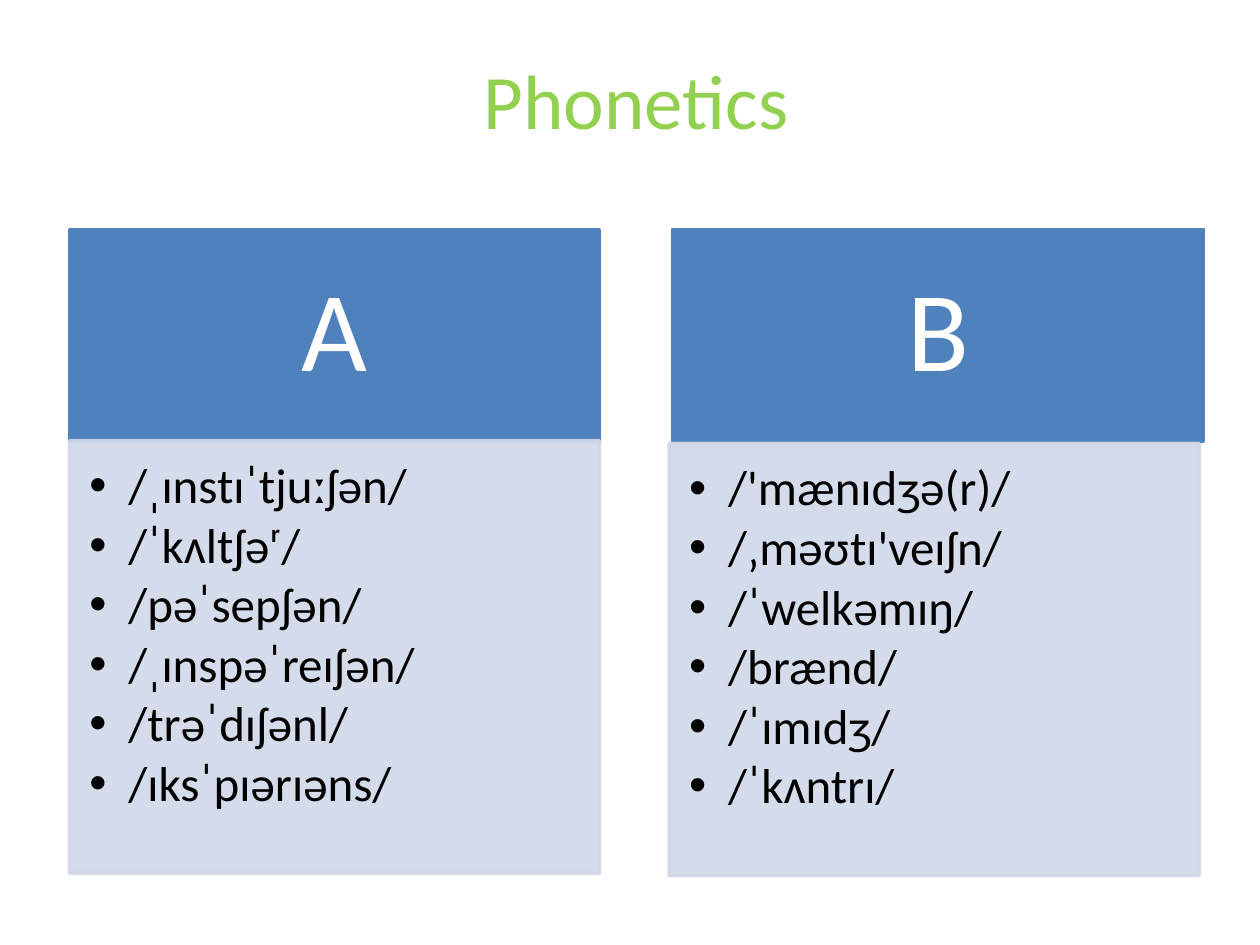
import lxml.etree
import pptx
import pptx.dml.color
import pptx.enum.shapes
import pptx.enum.text
import pptx.oxml.ns
import pptx.util

Inches = pptx.util.Inches
Pt = pptx.util.Pt
ALIGN = pptx.enum.text.PP_ALIGN
ANCHOR = pptx.enum.text.MSO_ANCHOR

COLORS = {
    "title": "92D050",
    "header": "4F81BD",
    "body": "D0D8E8",
    "light": "FFFFFF",
    "dark": "000000",
}
FONT = "Calibri"
BOX_W, HEADER_H, BODY_H = 4.21, 1.68, 3.43
HEADER_TOP = 1.82

# heading, header left, body left, body top, transcriptions
COLUMNS = [
    ("A", 0.55, 0.55, 3.5, [
        "/ˌɪnstɪˈtjuːʃən/", "/ˈkʌltʃəʳ/", "/pəˈsepʃən/",
        "/ˌɪnspəˈreɪʃən/", "/trəˈdɪʃənl/", "/ɪksˈpɪərɪəns/"]),
    ("B", 5.34, 5.31, 3.52, [
        "/'mænɪdʒə(r)/", "/‚məʊtɪ'veɪʃn/", "/ˈwelkəmɪŋ/",
        "/brænd/", "/ˈɪmɪdʒ/", "/ˈkʌntrɪ/"]),
]


def rgb(name):
    return pptx.dml.color.RGBColor.from_string(COLORS[name])


def set_alpha(fill_format, percent):
    """Make a solid fill partly opaque."""
    clr = fill_format.fore_color._xFill.find(pptx.oxml.ns.qn("a:srgbClr"))
    alpha = lxml.etree.SubElement(clr, pptx.oxml.ns.qn("a:alpha"))
    alpha.set("val", str(percent * 1000))


def add_bullet(p, indent):
    pPr = p._p.get_or_add_pPr()
    pPr.set("marL", str(Inches(indent)))
    pPr.set("indent", str(-Inches(indent)))
    font = lxml.etree.SubElement(pPr, pptx.oxml.ns.qn("a:buFont"))
    font.set("typeface", "Arial")
    bullet = lxml.etree.SubElement(pPr, pptx.oxml.ns.qn("a:buChar"))
    bullet.set("char", "•")


def write_text(tf, lines, size, color, align=ALIGN.CENTER, anchor=ANCHOR.MIDDLE,
               insets=(0.1, 0.05, 0.1, 0.05), spacing=1.0, after=0, indent=None):
    """Fill a text frame, one paragraph a line; an indent adds bullets."""
    tf.word_wrap = True
    tf.vertical_anchor = anchor
    tf.margin_left, tf.margin_top, tf.margin_right, tf.margin_bottom = map(Inches, insets)
    for i, line in enumerate(lines):
        p = tf.add_paragraph() if i else tf.paragraphs[0]
        p.alignment = align
        p.line_spacing = spacing
        p.space_after = Pt(after)
        if indent:
            add_bullet(p, indent)
        r = p.add_run()
        r.text = line
        r.font.name = FONT
        r.font.size = Pt(size)
        r.font.color.rgb = rgb(color)


class Deck:
    """Holds the presentation, its current slide and the house style."""

    def __init__(self, width, height):
        self.prs = pptx.Presentation()
        self.prs.slide_width, self.prs.slide_height = Inches(width), Inches(height)
        self.s = self.prs.slides.add_slide(self.prs.slide_layouts[6])

    def title(self, text, *box):
        sp = self.s.shapes.add_textbox(*map(Inches, box))
        write_text(sp.text_frame, [text], 44, "title")

    def panel(self, box, color, opacity=100):
        sp = self.s.shapes.add_shape(
            pptx.enum.shapes.MSO_SHAPE.RECTANGLE, *map(Inches, box))
        sp.shadow.inherit = False
        sp.line.width = Pt(2)
        for fill in (sp.fill, sp.line.fill):
            fill.solid()
            fill.fore_color.rgb = rgb(color)
            if opacity < 100:
                set_alpha(fill, opacity)
        return sp

    def header(self, text, left, top):
        sp = self.panel((left, top, BOX_W, HEADER_H), "header")
        write_text(sp.text_frame, [text], 65, "light",
                   insets=(0.51, 0.29, 0.51, 0.29), spacing=0.9)

    def bullet_list(self, lines, left, top):
        sp = self.panel((left, top, BOX_W, BODY_H), "body", opacity=90)
        write_text(sp.text_frame, lines, 28, "dark", align=ALIGN.LEFT,
                   anchor=ANCHOR.TOP, insets=(0.16, 0.16, 0.22, 0.24),
                   spacing=0.9, after=3.8, indent=0.31)


def main():
    deck = Deck(10, 7.5)
    deck.title("Phonetics", 0.55, 0.16, 9, 1.25)
    for heading, header_left, body_left, body_top, words in COLUMNS:
        deck.header(heading, header_left, HEADER_TOP)
        deck.bullet_list(words, body_left, body_top)
    deck.prs.save("out.pptx")


if __name__ == "__main__":
    main()
